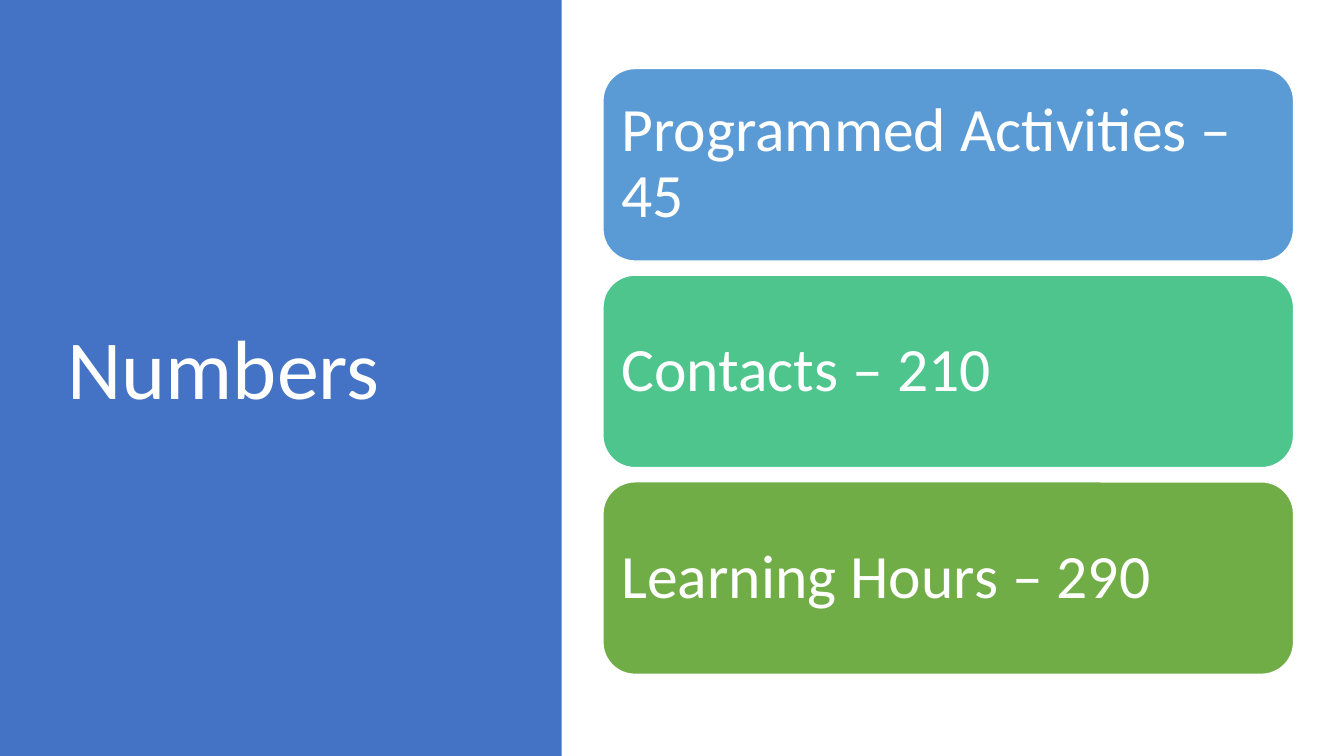
import pptx
import pptx.dml.color
import pptx.enum.shapes
import pptx.enum.text
import pptx.util
from dataclasses import dataclass

PX = 9144  # EMU per px, 100 px to the inch
SHAPES = pptx.enum.shapes.MSO_SHAPE


@dataclass(frozen=True)
class Theme:
    font: str = "Calibri"
    white: str = "FFFFFF"
    panel: str = "4472C4"
    cards: tuple = ("5B9BD5", "4DC58D", "70AD47")
    title_size: int = 60
    card_size: int = 44
    line_spacing: float = 0.9


THEME = Theme()
CARD_TEXTS = ("Programmed Activities – 45", "Contacts – 210", "Learning Hours – 290")


def rgb(value):
    return pptx.dml.color.RGBColor.from_string(value)


def apply(target, formats):
    for name, value in formats.items():
        setattr(target, name, value)


def place(shape, box):
    apply(shape, dict(zip(("left", "top", "width", "height"), (n * PX for n in box))))


def write(shape, text, size, margins):
    frame = shape.text_frame
    frame.text = text
    apply(frame, {
        "word_wrap": True,
        "auto_size": pptx.enum.text.MSO_AUTO_SIZE.NONE,
        "vertical_anchor": pptx.enum.text.MSO_ANCHOR.MIDDLE,
    })
    apply(frame, {f"margin_{side}": n * PX for side, n in margins.items()})
    para = frame.paragraphs[0]
    apply(para, {
        "alignment": pptx.enum.text.PP_ALIGN.LEFT,
        "line_spacing": THEME.line_spacing,
    })
    font = para.runs[0].font
    apply(font, {"name": THEME.font, "size": pptx.util.Pt(size)})
    font.color.rgb = rgb(THEME.white)


def add_block(page, kind, box, fill):
    block = page.shapes.add_shape(kind, *(n * PX for n in box))
    block.shadow.inherit = False
    block.fill.solid()
    block.fill.fore_color.rgb = rgb(fill)
    block.line.fill.background()
    return block


def add_title_panel(page, box, text):
    left, top, width, height = box
    panel = add_block(page, SHAPES.RECTANGLE, box, THEME.panel)
    title = page.shapes.title
    place(title, (left + 57, top + 68, width - 141, height - 148))
    write(title, text, THEME.title_size, {"left": 10, "right": 10, "top": 5, "bottom": 5})
    # Bring the title in front of its panel
    panel.element.addnext(title.element)


def add_cards(page, box, texts, gap):
    left, top, width, height = box
    card_height = (height - gap * (len(texts) - 1)) // len(texts)
    for index, (text, fill) in enumerate(zip(texts, THEME.cards)):
        card_top = top + index * (card_height + gap)
        card = add_block(page, SHAPES.ROUNDED_RECTANGLE,
                         (left, card_top, width, card_height), fill)
        card.line.color.rgb = rgb(THEME.white)
        card.line.width = pptx.util.Pt(1)
        write(card, text, THEME.card_size,
              dict.fromkeys(("left", "right", "top", "bottom"), 9))


def main():
    deck = pptx.Presentation()
    apply(deck, {"slide_width": 1333 * PX, "slide_height": 750 * PX})
    page = deck.slides.add_slide(deck.slide_layouts.get_by_name("Title Only"))
    # Left: title panel; right: stacked figures
    add_title_panel(page, (0, 0, 557, 750), "Numbers")
    add_cards(page, (598, 68, 685, 601), CARD_TEXTS, 14)
    deck.save("out.pptx")


if __name__ == "__main__":
    main()
